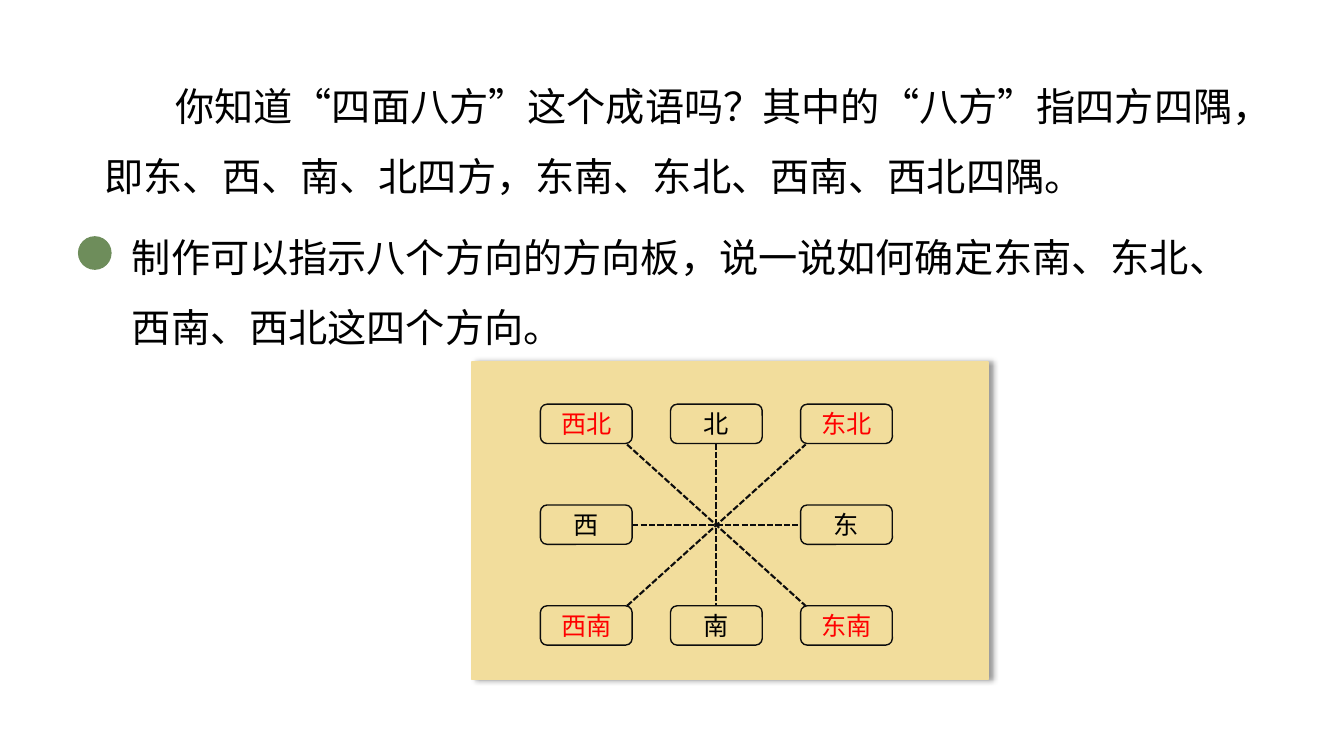
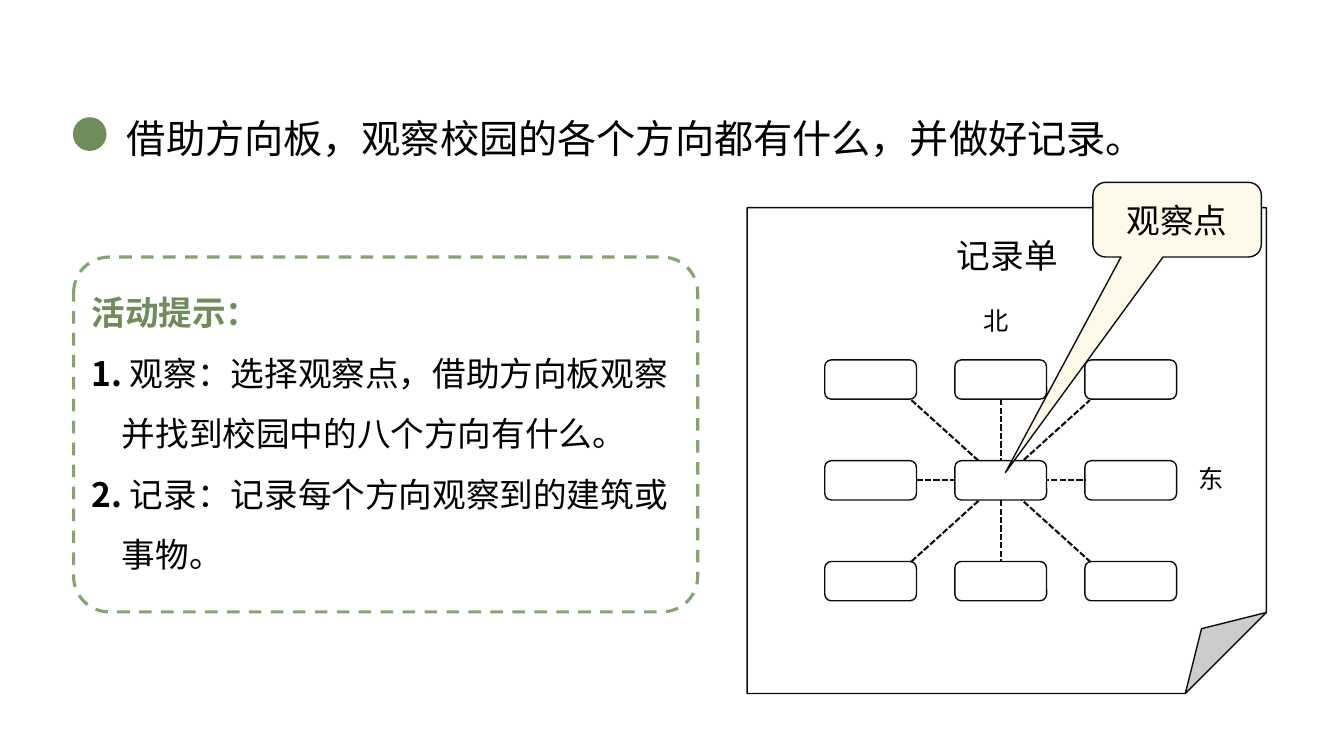
"""Build two lesson slides about the eight compass directions."""
from dataclasses import dataclass
from typing import NamedTuple

from lxml import etree
from pptx import Presentation
from pptx import util as u
from pptx.dml.color import RGBColor
from pptx.enum import dml, shapes, text
from pptx.oxml import ns

Inches, Pt = u.Inches, u.Pt
SHAPE = shapes.MSO_SHAPE


@dataclass(frozen=True)
class Theme:
    """Colours, fonts and type sizes shared by the slides."""
    ink: str = "000000"
    outline: str = "0D0D0D"
    green: str = "6E8D5B"
    dash_green: str = "84A56D"
    sand: str = "F2DD9C"
    cream: str = "FEF9E9"
    white: str = "FFFFFF"
    red: str = "FF0000"
    cjk: str = "Noto Sans CJK SC"
    numeral: str = "Noto Sans CJK JP"
    serif: str = "Times New Roman"
    label: str = "Arial"
    body_pt: int = 28
    note_pt: int = 24
    label_pt: int = 18
    leading: float = 1.8


T = Theme()


class Box(NamedTuple):
    """A rectangle in inches."""
    left: float
    top: float
    width: float
    height: float

    def emu(self) -> list:
        """Return the four lengths for a drawing call."""
        return [Inches(v) for v in self]


class Run(NamedTuple):
    """A stretch of text with its own font."""
    text: str
    font: str = T.cjk
    bold: bool = False
    color: str = T.ink


class Compass(NamedTuple):
    """Place and content of a three by three direction grid."""
    left: float
    top: float
    labels: tuple = ("",) * 9
    centre: bool = False


CELL_W, CELL_H, STEP_X, STEP_Y = 0.91, 0.39, 1.29, 1.0
DIAGONAL_X, DIAGONAL_Y = (0.86, 2.63), (0.4, 2.0)


def write(tf, paragraphs: list, *, size: int, align=text.PP_ALIGN.LEFT,
          leading: bool = False, margin: float = 0, indent: float = 0,
          anchor=text.MSO_ANCHOR.TOP) -> None:
    """Fill a text frame with paragraphs made of runs."""
    tf.word_wrap = True
    tf.vertical_anchor = anchor
    for i, runs in enumerate(paragraphs):
        p = tf.paragraphs[0] if i == 0 else tf.add_paragraph()
        p.alignment = align
        if leading:
            p.line_spacing = Pt(size * T.leading)
        if indent:
            hang = margin if i or indent > 0 else 0
            pPr = p._p.get_or_add_pPr()
            pPr.set("marL", str(Inches(hang)))
            pPr.set("indent", str(Inches(indent if hang or indent > 0 else 0)))
        for run in runs:
            r = p.add_run()
            r.text = run.text
            r.font.size = Pt(size)
            r.font.bold = run.bold
            r.font.color.rgb = RGBColor.from_string(run.color)
            r.font.name = run.font
            rPr = r._r.get_or_add_rPr()
            rPr.set("lang", "zh-CN")
            ea = etree.SubElement(rPr, ns.qn("a:ea"))
            ea.set("typeface", T.cjk)


def add_text(s, box: Box, paragraphs: list, **fmt) -> None:
    """Add a text box."""
    write(s.shapes.add_textbox(*box.emu()).text_frame, paragraphs, **fmt)


def write_label(tf, words: str, size: int = T.label_pt,
                color: str = T.ink) -> None:
    """Write a centred label."""
    write(tf, [[Run(words, T.label, color=color)]], size=size,
          align=text.PP_ALIGN.CENTER, anchor=text.MSO_ANCHOR.MIDDLE)


def add_label(s, box: Box, words: str, size: int = T.label_pt) -> None:
    """Add a centred label in its own text box."""
    write_label(s.shapes.add_textbox(*box.emu()).text_frame, words, size)


def add_shape(s, kind, box: Box, *, fill: str = "", line: str = T.outline,
              width: float = 1, dash=None, adjust: tuple = ()):
    """Add a preset shape without a shadow."""
    sp = s.shapes.add_shape(kind, *box.emu())
    sp.shadow.inherit = False
    if fill:
        sp.fill.solid()
        sp.fill.fore_color.rgb = RGBColor.from_string(fill)
    else:
        sp.fill.background()
    sp.line.color.rgb = RGBColor.from_string(line)
    sp.line.width = Pt(width)
    if dash:
        sp.line.dash_style = dash
    for i, value in enumerate(adjust):
        sp.adjustments[i] = value
    return sp


def add_shadow(sp) -> None:
    """Give a shape a soft shadow to the right."""
    effects = sp._element.spPr.find(ns.qn("a:effectLst"))
    shadow = etree.SubElement(effects, ns.qn("a:outerShdw"), blurRad=str(Pt(4)),
                              dist=str(Pt(3)), dir="0", algn="l", rotWithShape="0")
    color = etree.SubElement(shadow, ns.qn("a:srgbClr"), val=T.ink)
    etree.SubElement(color, ns.qn("a:alpha"), val="40000")


def add_dashes(s, x1: float, y1: float, x2: float, y2: float):
    """Add a dashed connector."""
    c = s.shapes.add_connector(shapes.MSO_CONNECTOR.STRAIGHT,
                               *(Inches(v) for v in (x1, y1, x2, y2)))
    c.line.color.rgb = RGBColor.from_string(T.outline)
    c.line.width = Pt(1.5)
    c.line.dash_style = dml.MSO_LINE.SQUARE_DOT
    etree.SubElement(c._element.spPr, ns.qn("a:effectLst"))
    return c


def add_compass(s, compass: Compass) -> None:
    """Draw direction boxes joined by dashed lines through the middle."""
    def add_cell(i: int, fill: str = ""):
        """Draw one direction box."""
        row, col = divmod(i, 3)
        box = Box(compass.left + col * STEP_X, compass.top + row * STEP_Y,
                  CELL_W, CELL_H)
        sp = add_shape(s, SHAPE.ROUNDED_RECTANGLE, box, fill=fill)
        words = compass.labels[i]
        if words:
            write_label(sp.text_frame, words,
                        color=T.red if len(words) > 1 else T.ink)
        return sp

    cells = {i: add_cell(i) for i in range(9) if i != 4}
    for start, side, end, end_side in ((1, 2, 7, 0), (3, 3, 5, 1)):
        c = add_dashes(s, 0, 0, 1, 1)
        c.begin_connect(cells[start], side)
        c.end_connect(cells[end], end_side)
    x1, x2 = (compass.left + x for x in DIAGONAL_X)
    y1, y2 = (compass.top + y for y in DIAGONAL_Y)
    add_dashes(s, x1, y1, x2, y2)
    add_dashes(s, x1, y2, x2, y1)
    if compass.centre:
        add_cell(4, T.white)


def add_task(s, left: float, top: float, height: float, words: str) -> None:
    """Add a task sentence with a round green marker."""
    add_shape(s, SHAPE.OVAL, Box(left, top + 0.32, 0.32, 0.32),
              fill=T.green, line=T.green)
    add_text(s, Box(left + 0.43, top, 11.02, height), [[Run(words)]],
             size=T.body_pt, leading=True)


def build_directions(s) -> None:
    """Draw the slide that introduces the direction board."""
    panel = add_shape(s, SHAPE.RECTANGLE, Box(4.68, 3.59, 5.12, 3.15),
                      fill=T.sand, line=T.sand)
    add_shadow(panel)
    pieces = ("你知道", "“", "四面八方", "”", "这个成语吗？其中的", "“", "八方", "”",
              "指四方四隅，即东、西、南、北四方，东南、东北、西南、西北四隅。")
    intro = [Run(words, T.cjk if words in "“”" else T.serif) for words in pieces]
    add_text(s, Box(0.94, 0.53, 11.49, 1.56), [intro], size=T.body_pt,
             leading=True, indent=0.7)
    add_task(s, 0.78, 2.03, 1.51,
             "制作可以指示八个方向的方向板，说一说如何确定东南、东北、西南、西北这四个方向。")
    add_compass(s, Compass(5.36, 4.01, ("西北", "北", "东北", "西", "", "东",
                                        "西南", "南", "东南")))


def build_record(s) -> None:
    """Draw the slide with the activity tips and the record sheet."""
    add_task(s, 0.73, 0.85, 0.81, "借助方向板，观察校园的各个方向都有什么，并做好记录。")
    tips = ("观察：选择观察点，借助方向板观察并找到校园中的八个方向有什么。",
            "记录：记录每个方向观察到的建筑或事物。")
    add_text(s, Box(0.81, 2.65, 6.11, 3.13),
             [[Run("活动提示：", bold=True, color=T.green)]]
             + [[Run(f"{n}. ", T.numeral, True), Run(tip)]
                for n, tip in enumerate(tips, 1)],
             size=T.note_pt, leading=True, margin=0.3, indent=-0.3)
    add_shape(s, SHAPE.ROUNDED_RECTANGLE, Box(0.73, 2.55, 6.19, 3.52),
              line=T.dash_green, width=2.25, dash=dml.MSO_LINE.DASH, adjust=(0.1,))
    add_shape(s, SHAPE.FOLDED_CORNER, Box(7.41, 2.06, 5.15, 4.82), fill=T.white)
    add_compass(s, Compass(8.18, 3.57, centre=True))
    add_label(s, Box(9.46, 2.98, 0.84, 0.4), "北")
    add_label(s, Box(11.59, 4.55, 0.84, 0.4), "东")
    add_label(s, Box(9.13, 2.28, 1.72, 0.5), "记录单", T.note_pt)
    callout = add_shape(s, SHAPE.ROUNDED_RECTANGULAR_CALLOUT,
                        Box(10.84, 1.81, 1.67, 0.74), fill=T.cream,
                        adjust=(-1.02, 3.39, 0.17))
    write_label(callout.text_frame, "观察点", T.note_pt)


def main() -> None:
    """Build and save the presentation."""
    prs = Presentation()
    prs.slide_width, prs.slide_height = Inches(13.33), Inches(7.5)
    for build in (build_directions, build_record):
        build(prs.slides.add_slide(prs.slide_layouts[6]))
    prs.save("out.pptx")


if __name__ == "__main__":
    main()
